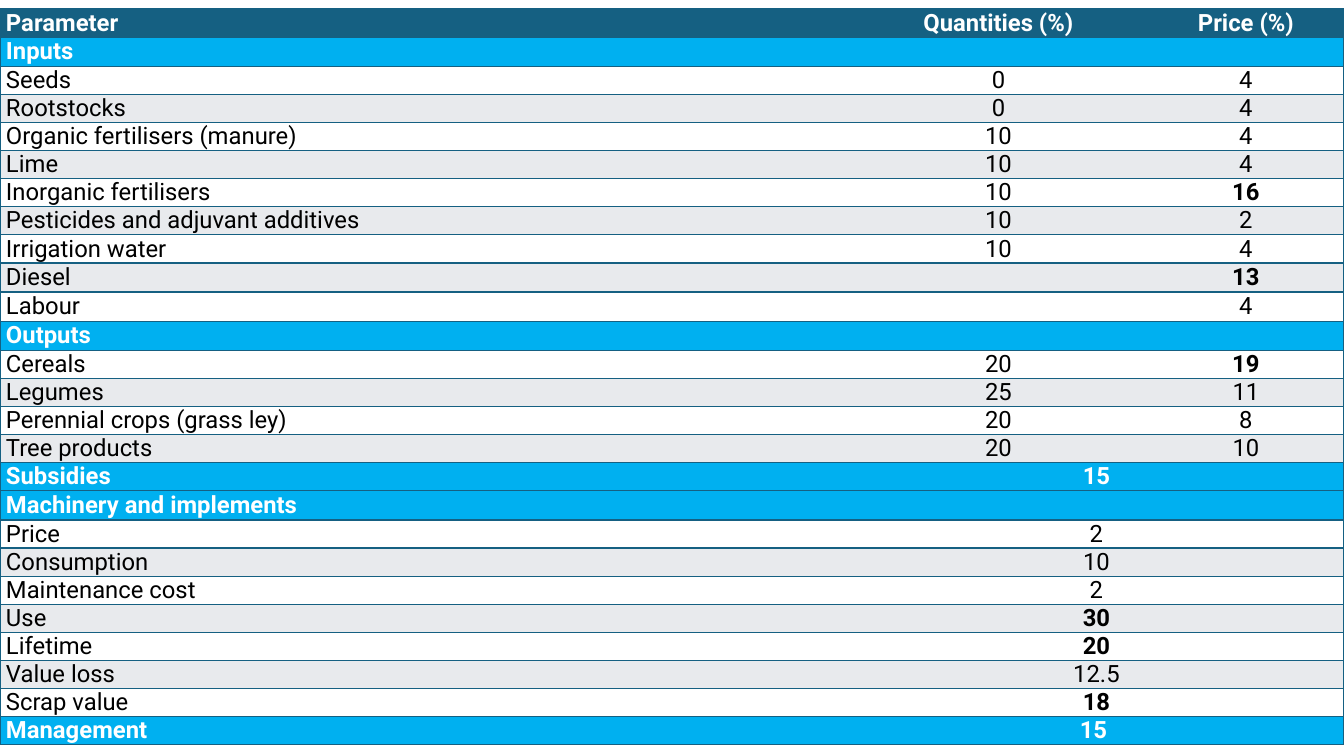
from lxml.etree import SubElement
from pptx import Presentation
from pptx.dml.color import RGBColor
from pptx.enum.text import MSO_ANCHOR, PP_ALIGN
from pptx.oxml.ns import qn
from pptx.util import Pt

PX = 914400 / 100.8
NAVY = RGBColor(0x15, 0x60, 0x82)
SKY = RGBColor(0x00, 0xB0, 0xF0)
GREY = RGBColor(0xE8, 0xEA, 0xED)
WHITE = RGBColor(0xFF, 0xFF, 0xFF)
BLACK = RGBColor(0x00, 0x00, 0x00)
NO_STYLE = "{2D5ABB26-0587-4C30-8999-92F81FD0307C}"


def px(length):
    return round(length * PX)


def add_border(cell, side):
    line = SubElement(cell._tc.get_or_add_tcPr(), qn(f"a:ln{side}"), w=str(Pt(1)))
    fill = SubElement(line, qn("a:solidFill"))
    SubElement(fill, qn("a:srgbClr"), val=str(NAVY))


# Each row: kind, then its cells; two cells mean the value spans both value columns
parameters = [
    ("header", "Parameter", "Quantities (%)", "Price (%)"),
    ("section", "Inputs", "", ""),
    ("item", "Seeds", "0", "4"),
    ("item", "Rootstocks", "0", "4"),
    ("item", "Organic fertilisers (manure)", "10", "4"),
    ("item", "Lime", "10", "4"),
    ("item", "Inorganic fertilisers", "10", "16"),
    ("item", "Pesticides and adjuvant additives", "10", "2"),
    ("item", "Irrigation water", "10", "4"),
    ("item", "Diesel", "", "13"),
    ("item", "Labour", "", "4"),
    ("section", "Outputs", "", ""),
    ("item", "Cereals", "20", "19"),
    ("item", "Legumes", "25", "11"),
    ("item", "Perennial crops (grass ley)", "20", "8"),
    ("item", "Tree products", "20", "10"),
    ("section", "Subsidies", "15"),
    ("section", "Machinery and implements", ""),
    ("item", "Price", "2"),
    ("item", "Consumption", "10"),
    ("item", "Maintenance cost", "2"),
    ("item", "Use", "30"),
    ("item", "Lifetime", "20"),
    ("item", "Value loss", "12.5"),
    ("item", "Scrap value", "18"),
    ("section", "Management", "15 "),
]
highlights = {
    ("Inorganic fertilisers", "16"), ("Diesel", "13"), ("Cereals", "19"),
    ("Use", "30"), ("Lifetime", "20"), ("Scrap value", "18"),
}
column_widths = [849, 299, 196]
row_height = 28

# Slide
deck = Presentation()
deck.slide_width, deck.slide_height = px(1344), px(756)
slide = deck.slides.add_slide(deck.slide_layouts[6])

# Table grid
sensitivity = slide.shapes.add_table(
    len(parameters), len(column_widths), 0, px(9),
    px(sum(column_widths)), px(row_height * len(parameters))).table
sensitivity._tbl.tblPr.find(qn("a:tableStyleId")).text = NO_STYLE
for column, width in zip(sensitivity.columns, column_widths):
    column.width = px(width)

# Rows, with the banding restarted under each section
band = 0
for row, (kind, *texts) in enumerate(parameters):
    sensitivity.rows[row].height = px(row_height)
    if kind == "item":
        background, color = (WHITE, GREY)[band % 2], BLACK
        band += 1
    else:
        background, color = (NAVY if kind == "header" else SKY), WHITE
        band = 0
    if len(texts) == 2:
        sensitivity.cell(row, 1).merge(sensitivity.cell(row, 2))
        texts.append("")

    for col, text in enumerate(texts):
        cell = sensitivity.cell(row, col)
        for side in ("LTB", "TB", "RTB")[col]:
            add_border(cell, side)
        if cell.is_merge_origin:
            cell._tc.tcPr.remove(cell._tc.tcPr.find(qn("a:lnT")))
            cell._tc.tcPr.remove(cell._tc.tcPr.find(qn("a:lnB")))
            for side in "RTB":
                add_border(cell, side)
        cell.fill.solid()
        cell.fill.fore_color.rgb = background
        layout = {"margin_left": px(6), "margin_right": px(6), "margin_top": 0,
                  "margin_bottom": 0, "vertical_anchor": MSO_ANCHOR.MIDDLE}
        for name, value in layout.items():
            setattr(cell, name, value)

        paragraph = cell.text_frame.paragraphs[0]
        paragraph.alignment = PP_ALIGN.CENTER if col else PP_ALIGN.LEFT
        if not text:
            # Empty cells keep the text size so that rows stay equal
            SubElement(paragraph._p, qn("a:endParaRPr"), sz="1700")
            continue
        run = paragraph.add_run()
        run.text = text
        bold = kind != "item" or (col > 0 and (texts[0], text) in highlights)
        for name, value in {"name": "Roboto", "size": Pt(17), "bold": bold}.items():
            setattr(run.font, name, value)
        run.font.color.rgb = color

deck.save("out.pptx")
